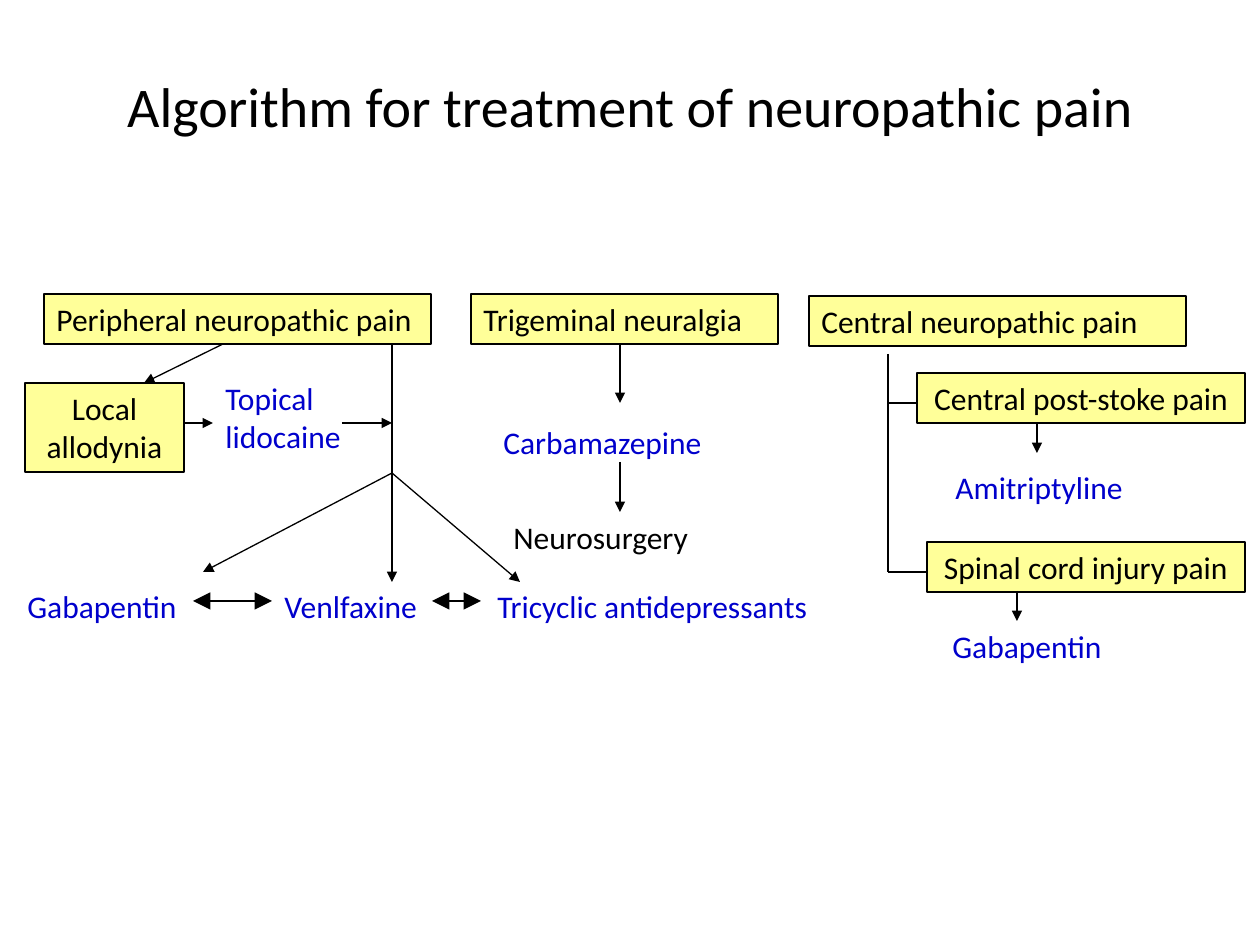
from dataclasses import dataclass

from lxml import etree
from pptx import Presentation
from pptx.dml.color import RGBColor
from pptx.enum.shapes import MSO_CONNECTOR, MSO_SHAPE
from pptx.enum.text import MSO_ANCHOR, MSO_AUTO_SIZE, PP_ALIGN
from pptx.oxml.ns import qn
from pptx.util import Emu, Pt

STRAIGHT = MSO_CONNECTOR.STRAIGHT
RECTANGLE = MSO_SHAPE.RECTANGLE
TOP, BOTTOM = MSO_ANCHOR.TOP, MSO_ANCHOR.BOTTOM
GROW, FIXED = MSO_AUTO_SIZE.SHAPE_TO_FIT_TEXT, MSO_AUTO_SIZE.NONE
LEFT, CENTER = PP_ALIGN.LEFT, PP_ALIGN.CENTER

PX_PER_INCH = 126
ROW = 50
DOUBLE_ROW = 89


@dataclass(frozen=True)
class Theme:
    """Colours and type sizes of the slide."""
    font: str = "Calibri"
    ink: RGBColor = RGBColor(0x00, 0x00, 0x00)
    drug: RGBColor = RGBColor(0x00, 0x00, 0xCC)
    condition: RGBColor = RGBColor(0xFF, 0xFF, 0x99)
    title_size: Pt = Pt(32)
    body_size: Pt = Pt(18)
    thin: Pt = Pt(0.75)
    thick: Pt = Pt(1)


THEME = Theme()


def px(length):
    """Turn pixels into EMU."""
    return Emu(round(length * 914400 / PX_PER_INCH))


def write(frame, text, size, color, align, wrap=True, anchor=TOP, autosize=GROW):
    """Fill a text frame, one paragraph per line of text."""
    frame.text = text
    frame.word_wrap = wrap
    frame.vertical_anchor = anchor
    frame.auto_size = autosize
    for paragraph in frame.paragraphs:
        paragraph.alignment = align
        paragraph.font.name = THEME.font
        paragraph.font.size = size
        paragraph.font.color.rgb = color


def add_title(slide, text):
    """Add the slide heading."""
    heading = slide.shapes.add_textbox(px(35), px(45), px(1191), px(100))
    write(heading.text_frame, text, THEME.title_size, THEME.ink, CENTER,
          anchor=BOTTOM, autosize=FIXED)


def add_condition(slide, text, left, top, width, height=ROW, align=CENTER):
    """Add a boxed pain condition."""
    box = slide.shapes.add_shape(RECTANGLE, px(left), px(top), px(width), px(height))
    box.shadow.inherit = False
    box.fill.solid()
    box.fill.fore_color.rgb = THEME.condition
    box.line.color.rgb = THEME.ink
    box.line.width = THEME.thin
    write(box.text_frame, text, THEME.body_size, THEME.ink, align)


def add_treatment(slide, text, left, top, width, height=ROW,
                  color=THEME.drug, align=LEFT, wrap=False):
    """Add an unboxed treatment label."""
    label = slide.shapes.add_textbox(px(left), px(top), px(width), px(height))
    write(label.text_frame, text, THEME.body_size, color, align, wrap)


def add_line(slide, start, end, arrows=(), arrow_size="med", width=THEME.thin):
    """Add a straight line with arrowheads at the named ends."""
    line = slide.shapes.add_connector(STRAIGHT, *map(px, start + end))
    line.line.color.rgb = THEME.ink
    line.line.width = width
    outline = line.line._get_or_add_ln()
    for arrow in arrows:
        etree.SubElement(outline, qn(f"a:{arrow}"), type="triangle",
                         w=arrow_size, len=arrow_size)
    etree.SubElement(outline.getparent(), qn("a:effectLst"))


def add_arrow(slide, start, end):
    """Add a one-way arrow."""
    add_line(slide, start, end, ("tailEnd",))


def add_exchange(slide, start, end):
    """Add a two-way arrow with large heads."""
    add_line(slide, start, end, ("headEnd", "tailEnd"), "lg")


def add_peripheral_branch(slide):
    """Add the peripheral neuropathic pain pathway."""
    add_condition(slide, "Peripheral neuropathic pain", 44, 294, 387, align=LEFT)
    add_condition(slide, "Local allodynia", 25, 383, 159, DOUBLE_ROW)
    add_treatment(slide, "Topical\nlidocaine", 213, 373, 142, DOUBLE_ROW)
    for drug, left, width in (("Gabapentin", 15, 176), ("Venlfaxine", 272, 160),
                              ("Tricyclic antidepressants", 485, 339)):
        add_treatment(slide, drug, left, 581, width)
    fork = (392, 473)
    add_line(slide, (392, 344), fork, width=THEME.thick)
    for target in ((203, 572), (392, 582), (520, 582)):
        add_arrow(slide, fork, target)
    add_arrow(slide, (223, 344), (144, 383))
    for start, end in ((184, 213), (342, 392)):
        add_arrow(slide, (start, 423), (end, 423))
    for start, end in ((193, 272), (432, 481)):
        add_exchange(slide, (start, 601), (end, 601))


def add_trigeminal_branch(slide):
    """Add the trigeminal neuralgia pathway."""
    add_condition(slide, "Trigeminal neuralgia", 471, 294, 307, align=LEFT)
    add_treatment(slide, "Carbamazepine", 491, 417, 267, wrap=True)
    add_treatment(slide, "Neurosurgery", 501, 512, 228, color=THEME.ink, wrap=True)
    for start, end in ((344, 403), (462, 512)):
        add_arrow(slide, (620, start), (620, end))


def add_central_branch(slide):
    """Add the central neuropathic pain pathway."""
    trunk = 888
    add_condition(slide, "Central neuropathic pain", 809, 296, 377, align=LEFT)
    add_condition(slide, "Central post-stoke pain", 917, 373, 328)
    add_treatment(slide, "Amitriptyline", 942, 462, 194, align=CENTER)
    add_condition(slide, "Spinal cord injury pain", 927, 542, 318)
    add_treatment(slide, "Gabapentin", 939, 621, 176, align=CENTER)
    add_line(slide, (trunk, 354), (trunk, 572))
    for end, level in ((917, 403), (927, 572)):
        add_line(slide, (trunk, level), (end, level))
    for x, start, end in ((1037, 424, 453), (1017, 591, 621)):
        add_arrow(slide, (x, start), (x, end))


def main():
    """Build and save the slide."""
    deck = Presentation()
    deck.slide_width, deck.slide_height = px(1260), px(945)
    slide = deck.slides.add_slide(deck.slide_layouts[6])
    add_title(slide, "Algorithm for treatment of neuropathic pain")
    add_peripheral_branch(slide)
    add_trigeminal_branch(slide)
    add_central_branch(slide)
    deck.save("out.pptx")


if __name__ == "__main__":
    main()
